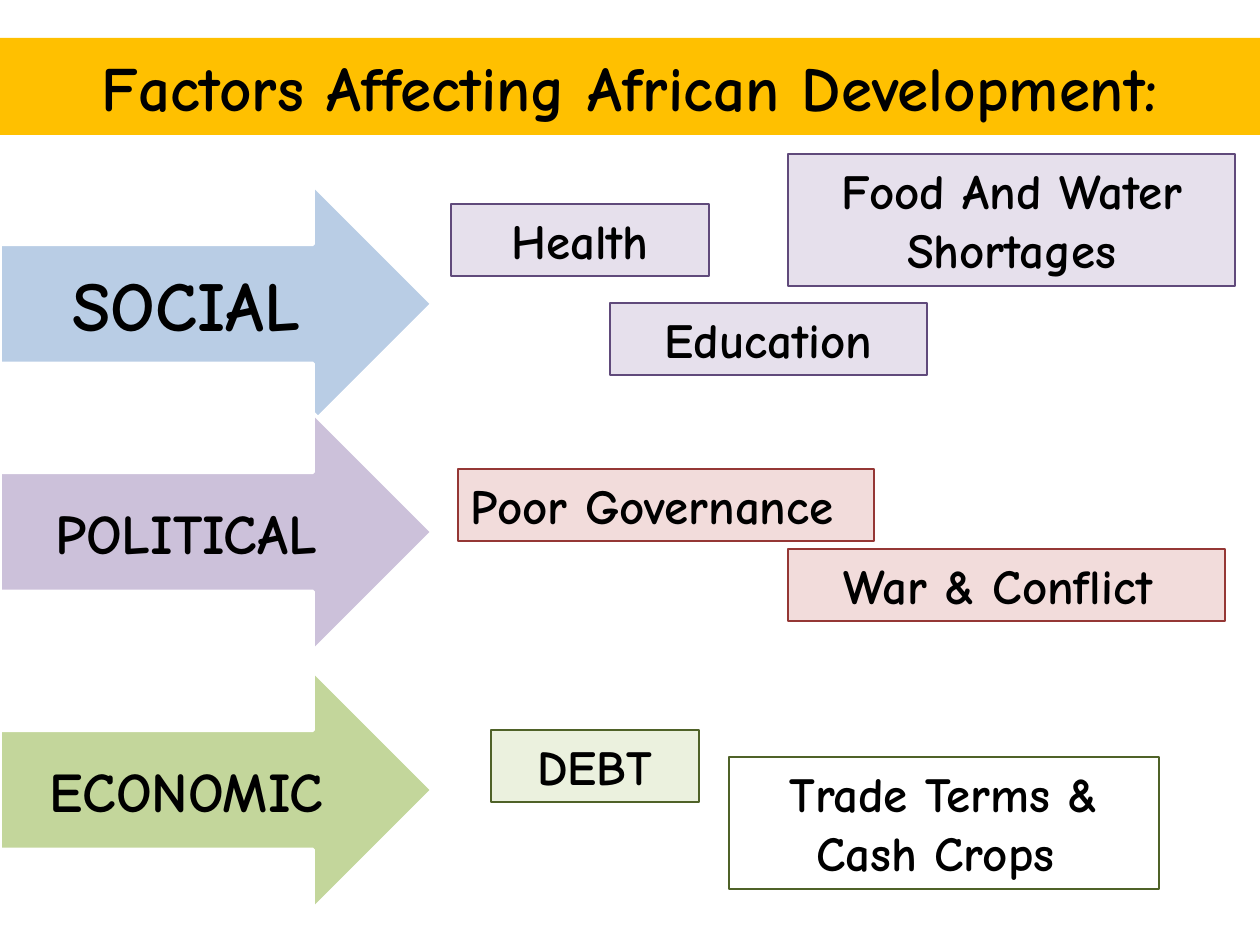
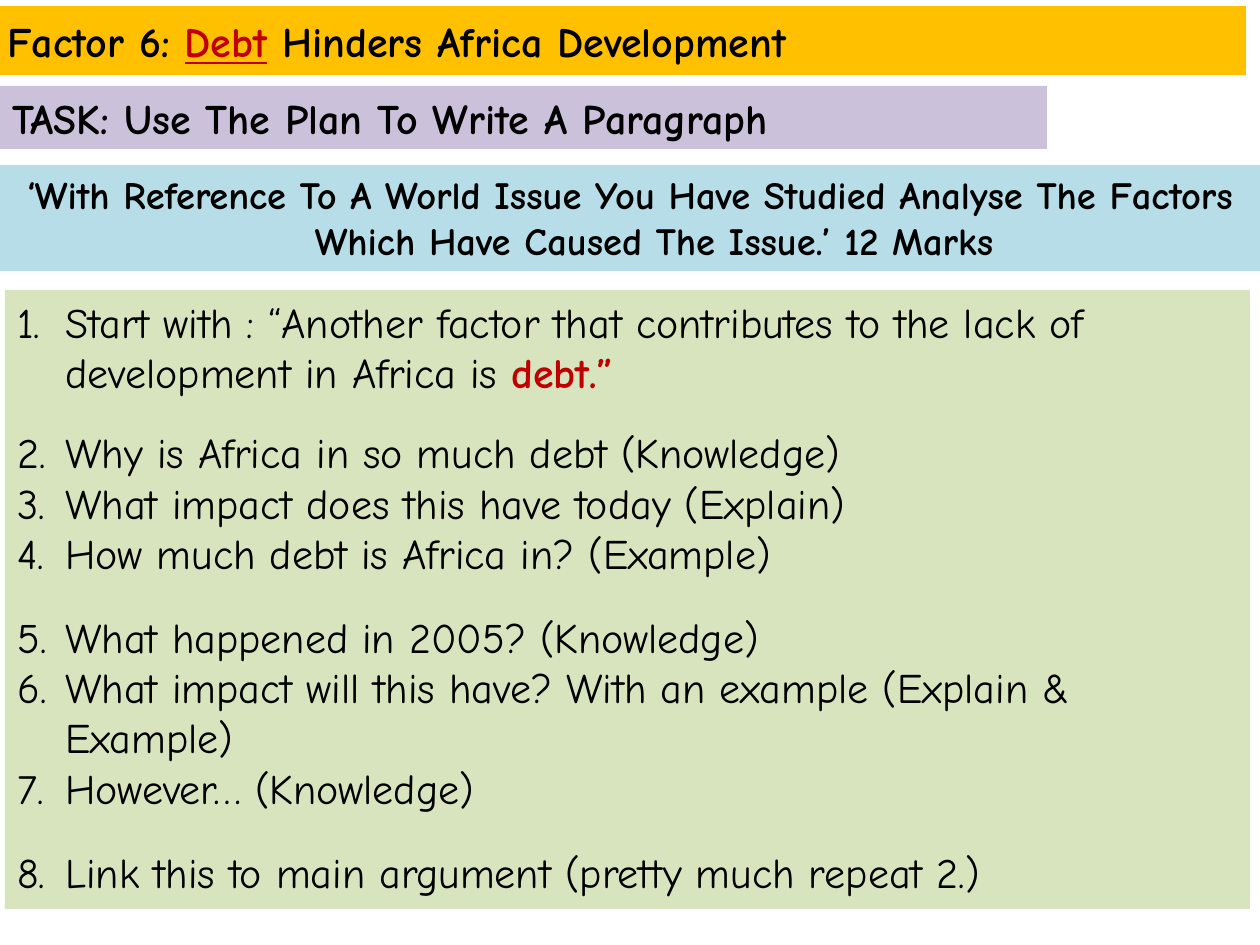
import pptx
import pptx.dml.color
import pptx.enum.shapes
import pptx.enum.text
import pptx.oxml.ns
import pptx.util
from lxml import etree

PX = 914400 / 126
FONT = "Comic Neue"
BLACK, RED, WHITE = "000000", "C00000", "FFFFFF"
AMBER, LILAC, SKY, LEAF = "FFC000", "CCC1DA", "B7DEE8", "D7E4BD"
HANGING = 48

SHAPES = pptx.enum.shapes.MSO_SHAPE
LEFT = pptx.enum.text.PP_ALIGN.LEFT
CENTER = pptx.enum.text.PP_ALIGN.CENTER
TOP = pptx.enum.text.MSO_ANCHOR.TOP
MIDDLE = pptx.enum.text.MSO_ANCHOR.MIDDLE


def emu(length):
    return round(length * PX)


def colour(value):
    return pptx.dml.color.RGBColor.from_string(value)


def add_box(page, place, fill=None, line=None, line_width=0.75,
            kind=SHAPES.RECTANGLE, anchor=TOP):
    """Add a preset shape at (left, top, width, height) px."""
    box = page.shapes.add_shape(kind, *map(emu, place))
    box.shadow.inherit = False
    if fill:
        box.fill.solid()
        box.fill.fore_color.rgb = colour(fill)
    else:
        box.fill.background()
    if line:
        box.line.color.rgb = colour(line)
        box.line.width = pptx.util.Pt(line_width)
    else:
        box.line.fill.background()
    box.text_frame.word_wrap = True
    box.text_frame.vertical_anchor = anchor
    return box


def add_span(para, text, size, bold=True, ink=BLACK, underline=False):
    span = para.add_run()
    span.text = text
    span.font.name = FONT
    span.font.size = pptx.util.Pt(size)
    span.font.bold = bold
    span.font.color.rgb = colour(ink)
    if underline:
        span.font.underline = True


def first_para(box, align=LEFT):
    para = box.text_frame.paragraphs[0]
    para.alignment = align
    return para


def hang(para):
    """Give the paragraph a hanging indent and return its properties."""
    properties = para._p.get_or_add_pPr()
    properties.set("marL", str(emu(HANGING)))
    properties.set("indent", str(-emu(HANGING)))
    return properties


def number(para):
    etree.SubElement(hang(para), pptx.oxml.ns.qn("a:buAutoNum"),
                     type="arabicPeriod")


def add_theme_arrow(page, top, text, size, fill):
    arrow = add_box(page, (0, top, 432, 238), fill, WHITE, 2,
                    SHAPES.RIGHT_ARROW, MIDDLE)
    add_span(first_para(arrow, CENTER), text, size)


def add_factor(page, place, text, fill, line, align=CENTER):
    box = add_box(page, place, fill, line)
    add_span(first_para(box, align), text, 28)


def add_numbered_plan(page, place, steps):
    """Add numbered steps, each a gap before it in points and its spans."""
    box = add_box(page, place, LEAF)
    for index, (gap, spans) in enumerate(steps):
        para = box.text_frame.add_paragraph() if index else first_para(box)
        para.alignment = LEFT
        para.space_before = pptx.util.Pt(gap)
        number(para)
        for text, bold, ink in spans:
            add_span(para, text, 24, bold, ink)


def build_factors(page):
    title = add_box(page, (0, 38, 1260, 97), AMBER, anchor=MIDDLE)
    add_span(first_para(title, CENTER),
             "Factors Affecting African Development:", 36)

    for top, theme, size, fill in [
        (185, "SOCIAL", 40, "B9CDE5"),
        (413, "POLITICAL", 32, LILAC),
        (671, "ECONOMIC", 32, "C3D69B"),
    ]:
        add_theme_arrow(page, top, theme, size, fill)

    social = ("E6E0EC", "604A7B")
    political = ("F2DCDB", "953735")
    economic = ("EBF1DE", "4F6228")
    add_factor(page, (451, 204, 258, 72), "Health", *social)
    add_factor(page, (610, 303, 317, 72), "Education", *social)
    add_factor(page, (788, 154, 447, 132), "Food And Water Shortages", *social)
    add_factor(page, (458, 469, 416, 72), "Poor Governance", *political, LEFT)
    add_factor(page, (788, 549, 437, 72), "War & Conflict ", *political)
    add_factor(page, (491, 730, 208, 72), "DEBT", *economic)
    add_factor(page, (729, 757, 430, 132), "Trade Terms & Cash Crops ",
               None, economic[1])


def build_debt_task(page):
    question = first_para(add_box(page, (0, 165, 1260, 106), SKY), CENTER)
    hang(question)
    add_span(question, "‘With Reference To A World Issue You Have Studied "
             "Analyse The Factors Which Have Caused The Issue.’ 12 Marks", 22)

    task = add_box(page, (0, 86, 1047, 63), LILAC)
    add_span(first_para(task), "TASK: Use The Plan To Write A Paragraph", 24)

    def plain(text):
        return [(text, False, BLACK)]

    add_numbered_plan(page, (5, 290, 1245, 619), [
        (0, plain("Start with : “Another factor that contributes to the lack "
                  "of development in Africa is ") + [("debt.”", True, RED)]),
        (17, plain("Why is Africa in so much debt (Knowledge)")),
        (0, plain("What impact does this have today (Explain)")),
        (0, plain("How much debt is Africa in? (Example)")),
        (19, plain("What happened in 2005? (Knowledge)")),
        (0, plain("What impact will this have? With an example "
                  "(Explain & Example)")),
        (0, plain("However… (Knowledge)")),
        (19, plain("Link this to main argument (pretty much repeat 2.)")),
    ])

    title = first_para(add_box(page, (-5, 6, 1251, 69), AMBER, anchor=MIDDLE))
    add_span(title, "Factor 6: ", 24)
    add_span(title, "Debt", 24, ink=RED, underline=True)
    add_span(title, " Hinders Africa Development", 24)


def main():
    deck = pptx.Presentation()
    deck.slide_width, deck.slide_height = emu(1260), emu(945)
    blank = deck.slide_layouts[6]
    for build in (build_factors, build_debt_task):
        build(deck.slides.add_slide(blank))
    deck.save("out.pptx")


if __name__ == "__main__":
    main()
